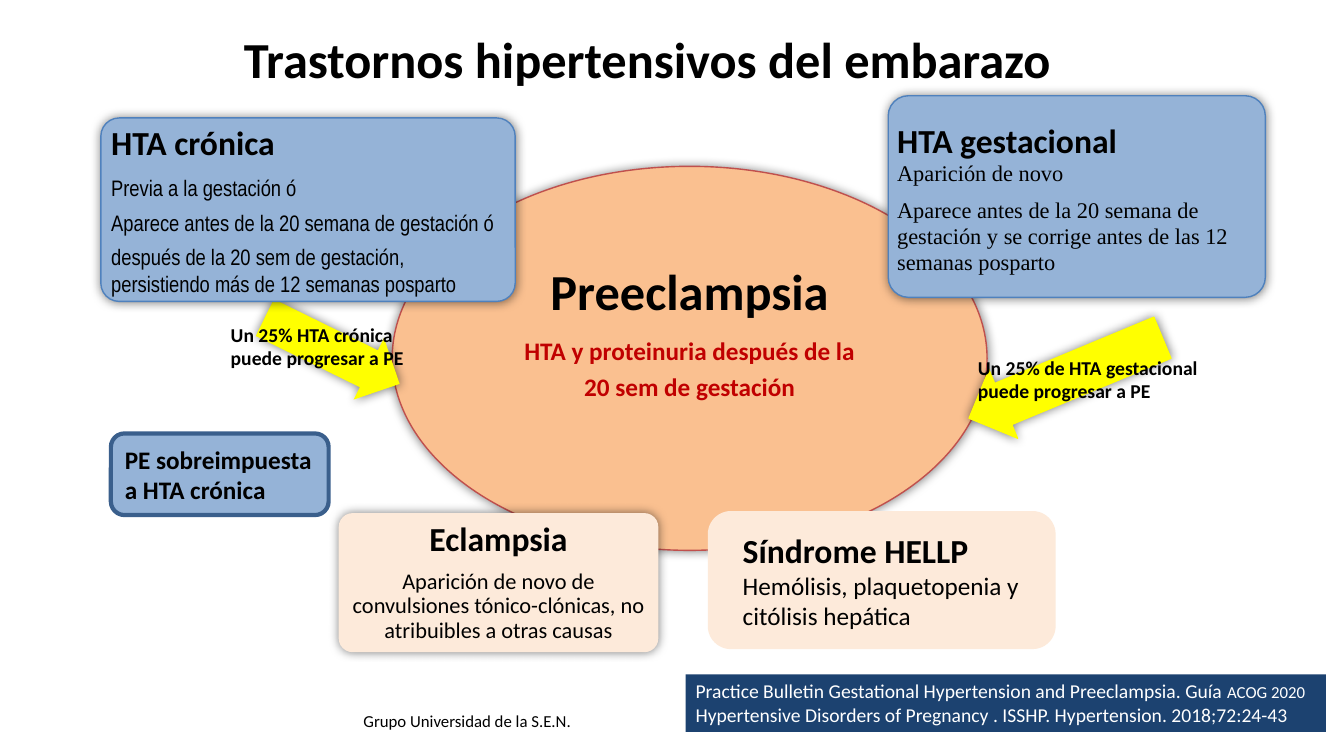
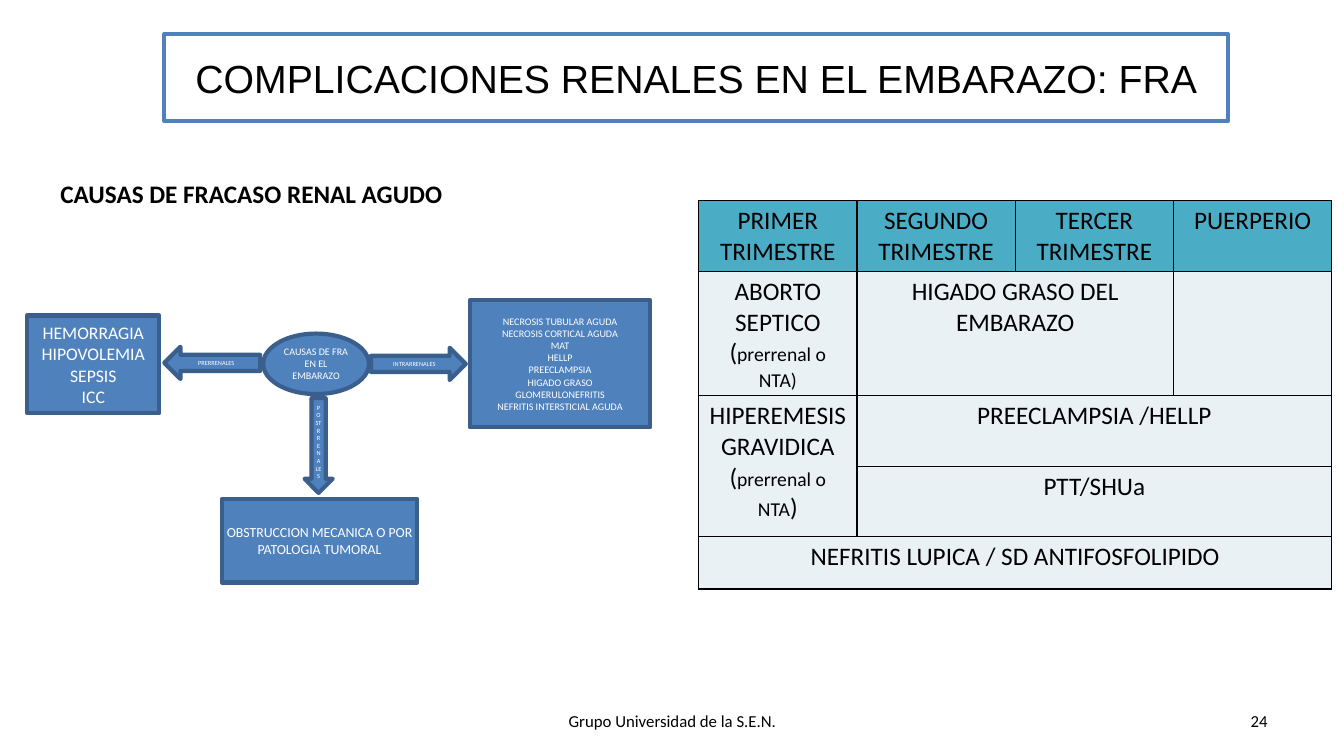
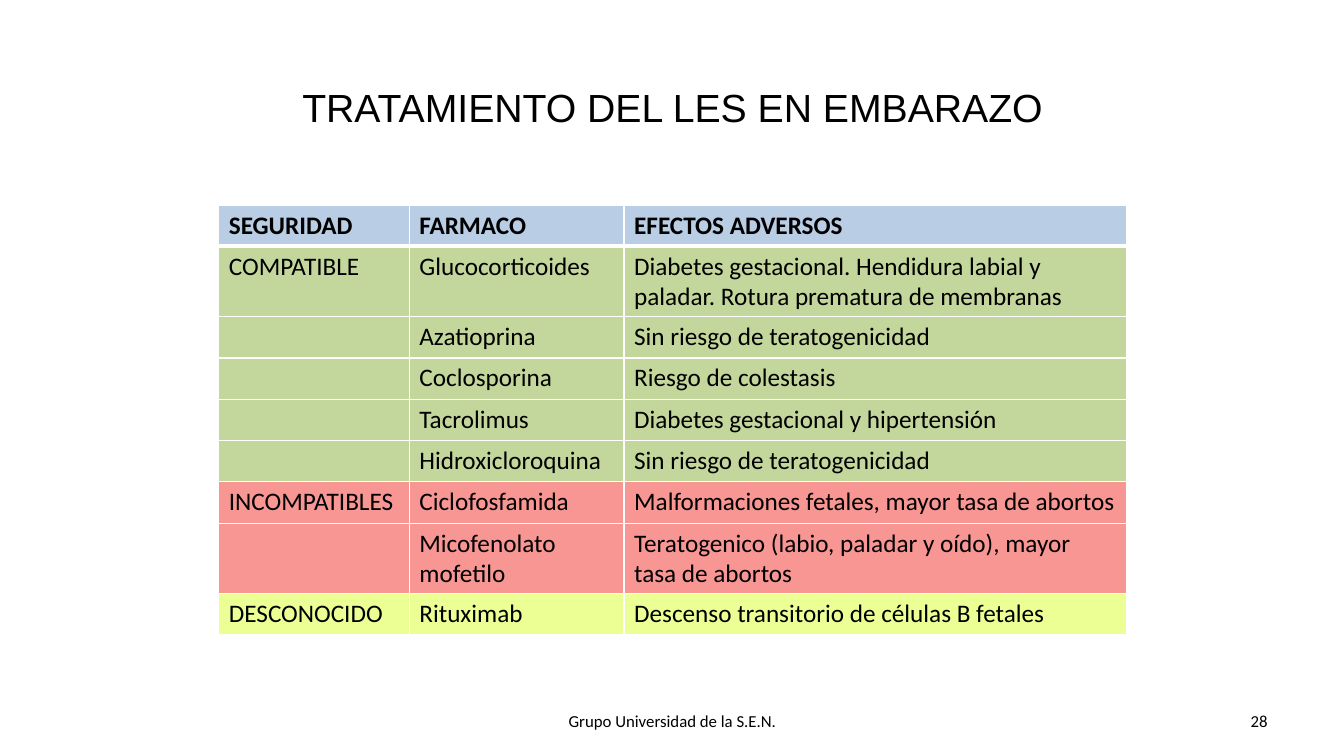
from itertools import zip_longest

from lxml.etree import SubElement
from pptx import Presentation
from pptx.dml.color import RGBColor
from pptx.enum.shapes import MSO_SHAPE as SHAPE
from pptx.enum.text import MSO_ANCHOR as ANCHOR, PP_ALIGN as ALIGN
from pptx.oxml.ns import qn
from pptx.util import Inches, Pt


class Theme:
    black, white, red = "000000", "FFFFFF", "C00000"
    blue, edge, navy = "4F81BD", "3A5F8C", "1C4270"
    sky, peach, cream, yellow = "95B3D7", "FAC090", "FDEADA", "FFFF00"
    rim, teal, ice, header = "C0504D", "4BACC6", "E9F1F5", "B9CDE5"
    safe, unsafe, unknown = "C3D69B", "F89693", "ECFF95"
    styles = {
        "main": dict(size=36, bold=True),
        "title": dict(size=28, name="Arial"),
        "head": dict(size=24, bold=True),
        "strong": dict(size=18, bold=True),
        "alert": dict(size=18, bold=True, color=red),
        "body": dict(size=18),
        "detail": dict(size=16),
        "narrow": dict(size=16, name="Arial Narrow"),
        "serif": dict(size=16, name="Times New Roman"),
        "label": dict(size=14, bold=True),
        "note": dict(size=14),
        "cite": dict(size=14, color=white),
        "cite_small": dict(size=12, color=white),
        "footer": dict(size=12),
        "node_l": dict(size=12.6, color=white),
        "node_m": dict(size=9.9, color=white),
        "node_s": dict(size=7.2, color=white),
        "node_xs": dict(size=4.5, color=white),
    }


T = Theme
FOOTER = "Grupo Universidad de la S.E.N."

DISORDERS = [
    dict(at=(2.32, 0.23, 8.29, 0.71), style="main",
         paras=["Trastornos hipertensivos del embarazo"]),
    dict(at=(3.89, 1.65, 5.9, 3.81), kind=SHAPE.OVAL, fill=T.peach, line=(T.rim, 1), glow=True,
         align=ALIGN.CENTER, anchor=ANCHOR.MIDDLE, insets=(0.03, 0.03, 0.03, 0.5),
         after=(12.6, 6.3), spacing=0.9, style="alert",
         paras=[[("Preeclampsia", "main")], "HTA y proteinuria después de la", "20 sem de gestación"]),
    dict(at=(2.55, 3.14, 1.49, 0.68), kind=SHAPE.RIGHT_ARROW, rotation=26.2, adj=(0.6, 0.5),
         fill=T.yellow, glow=True),
    dict(at=(1, 1.17, 4.11, 1.82), kind=SHAPE.ROUNDED_RECTANGLE, adj=(0.1,), fill=T.sky,
         line=(T.blue, 1), glow=True, anchor=ANCHOR.MIDDLE, insets=(0.05,) * 4,
         after=(8.4, 5.6, 5.6, 5.6), style="narrow",
         paras=[[("HTA crónica", "head")], "Previa a la gestación ó",
                "Aparece antes de la 20 semana de gestación ó",
                "después de la 20 sem de gestación, persistiendo más de 12 semanas posparto"]),
    dict(at=(9.53, 3.38, 2.08, 0.74), kind=SHAPE.LEFT_ARROW, rotation=337.4, adj=(0.6, 0.5),
         fill=T.yellow, line=(T.yellow, 0.75), glow=True),
    dict(at=(8.81, 0.95, 3.74, 2), kind=SHAPE.ROUNDED_RECTANGLE, adj=(0.1,), fill=T.sky,
         line=(T.blue, 1), glow=True, anchor=ANCHOR.MIDDLE, insets=(0.03, 0.08, 0.03, 0.03),
         after=(0, 8.4, 5.6), spacing=0.95, style="serif",
         paras=[[("HTA gestacional", "head")], "Aparición de novo",
                "Aparece antes de la 20 semana de gestación y se corrige antes de las 12 semanas posparto"]),
    dict(at=(3.36, 5.09, 3.17, 1.38), kind=SHAPE.ROUNDED_RECTANGLE, adj=(0.1,), fill=T.cream,
         glow=True, align=ALIGN.CENTER, anchor=ANCHOR.MIDDLE, insets=(0.05,) * 4,
         after=(8.4, 5.6), spacing=0.9, style="detail",
         paras=[[("Eclampsia", "head")],
                "Aparición de novo de convulsiones tónico-clónicas, no atribuibles a otras causas"]),
    dict(at=(9.6, 3.48, 2.51, 0.57), style="label",
         paras=["Un 25% de HTA gestacional puede progresar a PE"]),
    dict(at=(7.02, 5.07, 3.45, 1.37), kind=SHAPE.ROUNDED_RECTANGLE, fill=T.cream,
         anchor=ANCHOR.MIDDLE, insets=(0.28, 0.05, 0, 0.05), style="body",
         paras=[[("Síndrome HELLP", "head")], "Hemólisis, plaquetopenia y citólisis hepática"]),
    dict(at=(6.8, 6.69, 6.35, 0.57), kind=SHAPE.RECTANGLE, fill=T.navy, style="cite",
         paras=[[("Practice Bulletin Gestational Hypertension and Preeclampsia. Guía ", "cite"),
                 ("ACOG 2020", "cite_small")],
                "Hypertensive Disorders of Pregnancy . ISSHP. Hypertension. 2018;72:24-43"]),
    dict(at=(2.19, 3.15, 2.06, 0.57), style="label",
         paras=["Un 25% HTA crónica puede progresar a PE"]),
    dict(at=(1.1, 4.3, 2.16, 0.81), kind=SHAPE.ROUNDED_RECTANGLE, fill=T.sky, line=(T.edge, 3),
         anchor=ANCHOR.MIDDLE, style="strong", paras=["PE sobreimpuesta a HTA crónica"]),
]

CAUSES = [
    (SHAPE.OVAL, (2.61, 3.31, 1.05, 0.6), "node_s", ["CAUSAS DE FRA EN EL EMBARAZO"]),
    (SHAPE.LEFT_ARROW, (1.63, 3.44, 0.95, 0.32), "node_xs", ["PRERRENALES"]),
    (SHAPE.RIGHT_ARROW, (3.68, 3.45, 0.94, 0.32), "node_xs", ["INTRARRENALES"]),
    (SHAPE.DOWN_ARROW, (3.02, 3.95, 0.28, 0.94), "node_xs", ["POSTRRENALES"]),
    (SHAPE.RECTANGLE, (0.27, 3.13, 1.31, 0.97), "node_l",
     ["HEMORRAGIA", "HIPOVOLEMIA", "SEPSIS", "ICC"]),
    (SHAPE.RECTANGLE, (4.66, 2.98, 1.79, 1.26), "node_s",
     ["NECROSIS TUBULAR AGUDA", "NECROSIS CORTICAL AGUDA", "MAT", "HELLP", "PREECLAMPSIA",
      "HIGADO GRASO", "GLOMERULONEFRITIS", "NEFRITIS INTERSTICIAL AGUDA"]),
    (SHAPE.RECTANGLE, (2.2, 4.95, 1.94, 0.83), "node_m",
     ["OBSTRUCCION MECANICA O POR PATOLOGIA TUMORAL"]),
]

TRIMESTERS = [
    [["PRIMER TRIMESTRE"], ["SEGUNDO TRIMESTRE"], ["TERCER TRIMESTRE"], ["PUERPERIO"]],
    [["ABORTO SEPTICO", [("(", "body"), ("prerrenal o NTA)", "note")]],
     ["HIGADO GRASO DEL EMBARAZO"], [], []],
    [[[("HIPEREMESIS GRAVIDICA (", "body"), ("prerrenal o NTA", "note"), (")", "body")]],
     ["PREECLAMPSIA /HELLP"], [], []],
    [[], ["PTT/SHUa"], [], []],
    [["NEFRITIS LUPICA / SD ANTIFOSFOLIPIDO"], [], [], []],
]
TRIMESTER_SPANS = [((1, 1), (1, 2)), ((2, 0), (3, 0)), ((2, 1), (2, 3)),
                   ((3, 1), (3, 3)), ((4, 0), (4, 3))]

DRUG_HEADER = ("SEGURIDAD", "FARMACO", "EFECTOS ADVERSOS")
DRUG_GROUPS = [
    ("COMPATIBLE", T.safe, [
        ("Glucocorticoides",
         "Diabetes gestacional. Hendidura labial y paladar. Rotura prematura de membranas"),
        ("Azatioprina", "Sin riesgo de teratogenicidad"),
        ("Coclosporina", "Riesgo de colestasis"),
        ("Tacrolimus", "Diabetes gestacional y hipertensión"),
        ("Hidroxicloroquina", "Sin riesgo de teratogenicidad")]),
    ("INCOMPATIBLES", T.unsafe, [
        ("Ciclofosfamida", "Malformaciones fetales, mayor tasa de abortos"),
        ("Micofenolato mofetilo", "Teratogenico (labio, paladar y oído), mayor tasa de abortos")]),
    ("DESCONOCIDO", T.unknown, [
        ("Rituximab", "Descenso transitorio de células B fetales")]),
]


def write(tf, paras, style, align=ALIGN.LEFT, after=(), spacing=None):
    for i, (para, gap) in enumerate(zip_longest(paras, after, fillvalue=0)):
        p = tf.paragraphs[0] if i == 0 else tf.add_paragraph()
        layout = dict(alignment=align, space_before=Pt(0), space_after=Pt(gap), line_spacing=spacing)
        for key, value in layout.items():
            setattr(p, key, value)
        for text, name in [(para, style)] if isinstance(para, str) else para:
            r = p.add_run()
            r.text = text
            look = dict(name="Calibri", bold=False, color=T.black) | T.styles[name]
            r.font.color.rgb = RGBColor.from_string(look["color"])
            for key, value in dict(name=look["name"], bold=look["bold"], size=Pt(look["size"])).items():
                setattr(r.font, key, value)


def paint(fill, color):
    fill.solid()
    fill.fore_color.rgb = RGBColor.from_string(color)


def add_glow(sp):
    effects = sp._element.spPr.find(qn("a:effectLst"))
    shadow = SubElement(effects, qn("a:outerShdw"), blurRad=str(Pt(7.5)), dist="0", dir="0")
    color = SubElement(shadow, qn("a:srgbClr"), val=T.black)
    SubElement(color, qn("a:alpha"), val="50000")


def add_box(s, at, paras=(), style="body", kind=None, fill=None, line=None, glow=False,
            rotation=0, adj=(), anchor=ANCHOR.TOP, insets=(0.1, 0.05, 0.1, 0.05), **text):
    place = [Inches(v) for v in at]
    sp = s.shapes.add_textbox(*place) if kind is None else s.shapes.add_shape(kind, *place)
    if kind is not None:
        sp.shadow.inherit = False
    sp.rotation = rotation
    for i, value in enumerate(adj):
        sp.adjustments[i] = value
    if fill:
        paint(sp.fill, fill)
    if line:
        paint(sp.line.fill, line[0])
        sp.line.width = Pt(line[1])
    else:
        sp.line.fill.background()
    if glow:
        add_glow(sp)
    tf = sp.text_frame
    frame = dict(word_wrap=True, vertical_anchor=anchor)
    sides = ("margin_left", "margin_top", "margin_right", "margin_bottom")
    frame |= {side: Inches(v) for side, v in zip(sides, insets)}
    for key, value in frame.items():
        setattr(tf, key, value)
    write(tf, paras, style, **text)


def add_title(s, at, text, line=None):
    add_box(s, at, [text], "title", line=line, anchor=ANCHOR.MIDDLE, align=ALIGN.CENTER)


def add_footer(s, left=4.56, width=4.22, number=None):
    add_box(s, (left, 6.95, width, 0.4), [FOOTER], "footer", anchor=ANCHOR.MIDDLE, align=ALIGN.CENTER)
    if number:
        add_box(s, (9.56, 6.95, 3.11, 0.4), [str(number)], "footer",
                anchor=ANCHOR.MIDDLE, align=ALIGN.RIGHT)


def add_border(cell, color, widths):
    for side, width in zip("LRTB", widths):
        ln = SubElement(cell._tc.get_or_add_tcPr(), qn(f"a:ln{side}"), w=str(Pt(width)))
        SubElement(SubElement(ln, qn("a:solidFill")), qn("a:srgbClr"), val=color)


def add_grid(s, left, top, cols, heights, rows, fills, border, head_style="body",
             head_rule=1, align=ALIGN.LEFT, spans=()):
    frame = s.shapes.add_table(len(rows), len(cols), Inches(left), Inches(top),
                               Inches(sum(cols)), Inches(sum(heights)))
    table = frame.table
    table.first_row = table.horz_banding = False
    for items, sizes, key in ((table.columns, cols, "width"), (table.rows, heights, "height")):
        for item, size in zip(items, sizes):
            setattr(item, key, Inches(size))
    for i, (row, color) in enumerate(zip(rows, fills)):
        for j, paras in enumerate(row):
            cell = table.cell(i, j)
            add_border(cell, border, (1, 1, head_rule if i == 1 else 1, head_rule if i == 0 else 1))
            paint(cell.fill, color)
            write(cell.text_frame, paras, "body" if i else head_style, align)
    for first, last in spans:
        table.cell(*first).merge(table.cell(*last))


def disorders_slide(s):
    add_footer(s, 3.36, 2.55)
    for box in DISORDERS:
        add_box(s, **box)


def renal_slide(s):
    add_title(s, (1.63, 0.34, 10.55, 0.86), "COMPLICACIONES RENALES EN EL EMBARAZO: FRA", (T.blue, 3))
    add_box(s, (0.5, 1.72, 6, 0.45), ["CAUSAS DE FRACASO RENAL AGUDO"], "strong")
    for kind, at, style, paras in CAUSES:
        add_box(s, at, paras, style, kind, T.blue, (T.edge, 3), anchor=ANCHOR.MIDDLE,
                insets=(0.04,) * 4, align=ALIGN.CENTER)
    add_grid(s, 6.93, 1.99, [1.57] * 4, [0.7, 1.23, 0.7, 0.7, 0.52], TRIMESTERS,
             [T.teal] + [T.ice] * 4, T.black, align=ALIGN.CENTER, spans=TRIMESTER_SPANS)
    add_footer(s, number=24)


def lupus_slide(s):
    add_title(s, (0.67, 0.43, 12, 1.25), "TRATAMIENTO DEL LES EN EMBARAZO")
    rows, fills = [[[text] for text in DRUG_HEADER]], [T.header]
    for label, color, drugs in DRUG_GROUPS:
        for i, (drug, effect) in enumerate(drugs):
            rows.append([[] if i else [label], [drug], [effect]])
            fills.append(color)
    heights = [0.4, 0.7] + [0.41] * 5 + [0.7, 0.41]
    add_grid(s, 2.17, 2.04, [1.89, 2.13, 4.98], heights, rows, fills, T.white, "strong", head_rule=3)
    add_footer(s, number=28)


def main():
    prs = Presentation()
    prs.slide_width, prs.slide_height = Inches(13.33), Inches(7.5)
    for build in (disorders_slide, renal_slide, lupus_slide):
        build(prs.slides.add_slide(prs.slide_layouts[6]))
    prs.save("out.pptx")


if __name__ == "__main__":
    main()
